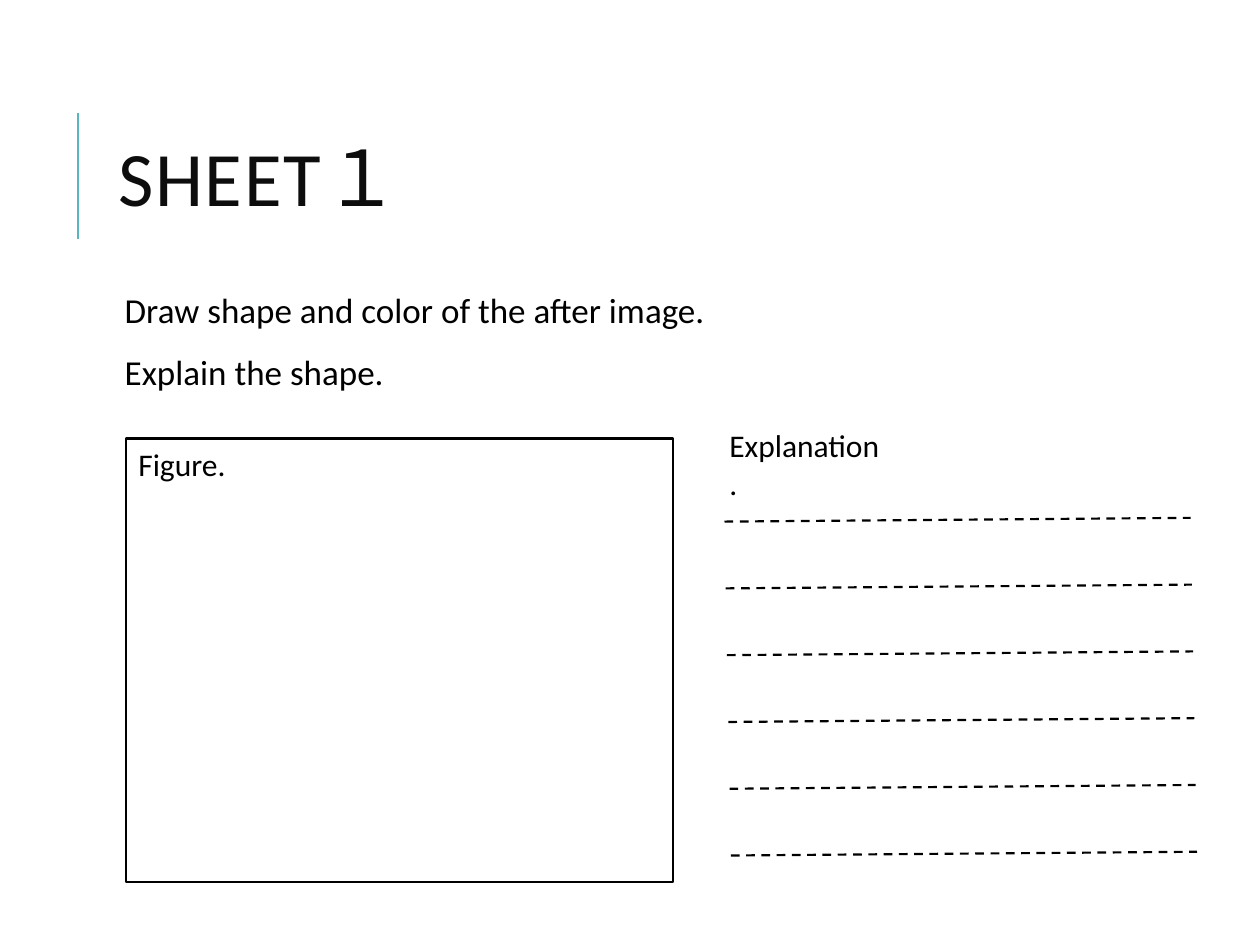
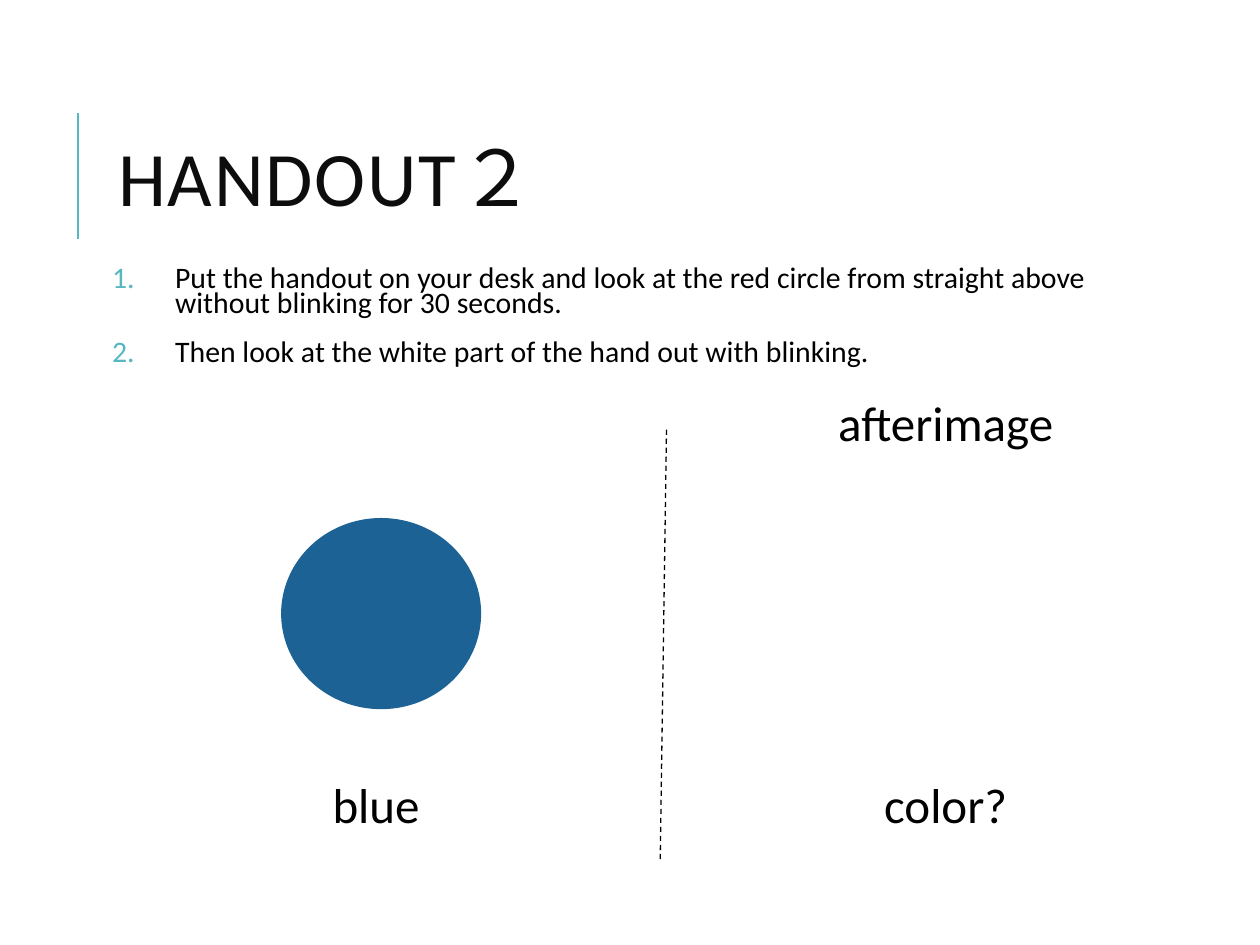
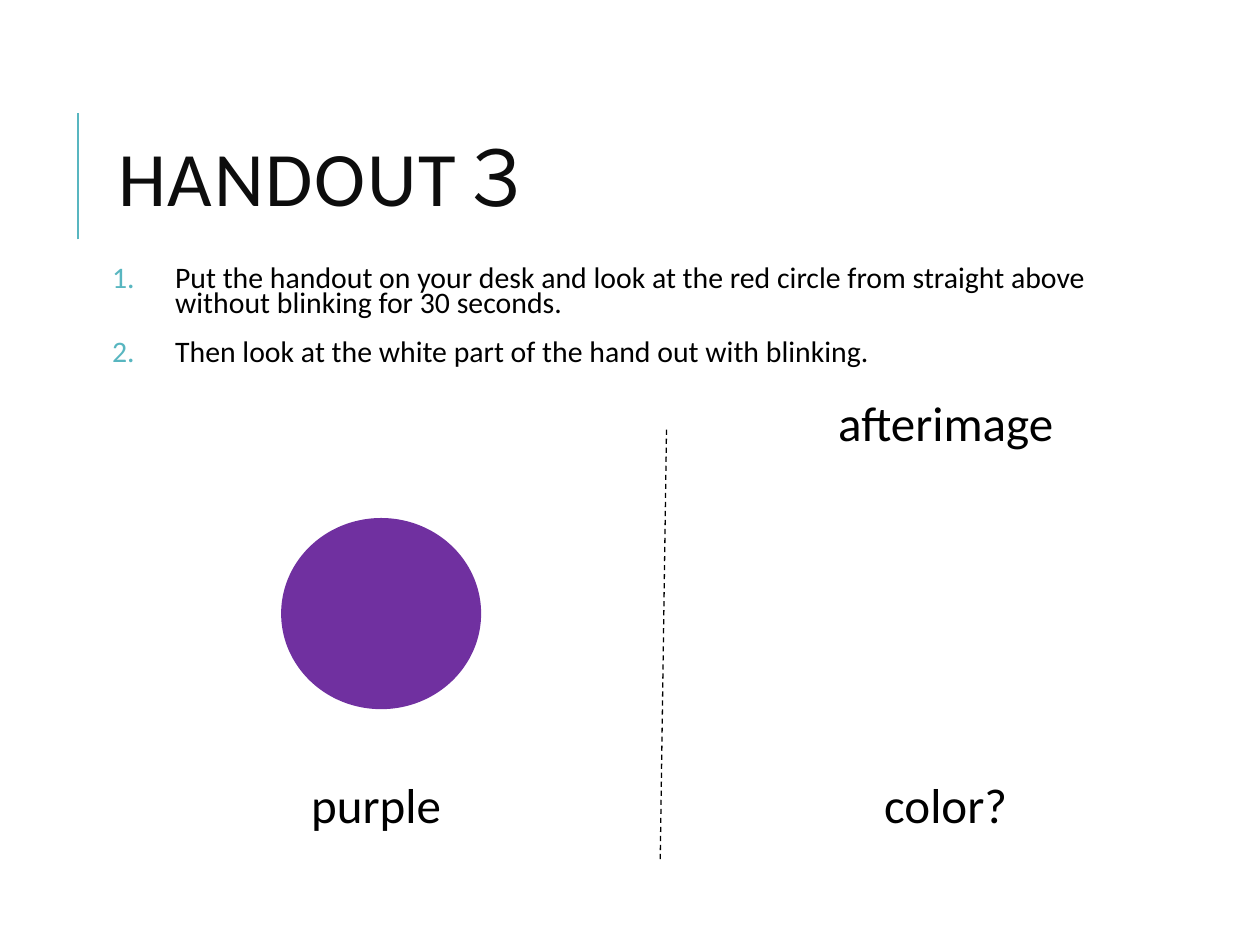
import pptx
import pptx.dml.color
import pptx.enum.dml
import pptx.enum.shapes
import pptx.enum.text
import pptx.oxml.xmlchemy
import pptx.util
from lxml import etree
from pptx.oxml.ns import qn
from pptx.util import Inches

FONT = "Calibri"
BLACK = "000000"
TITLE_INK = "0D0D0D"
ACCENT = "58B6C0"
TEXT_LEFT, TEXT_WIDTH = 0.84, 7.97
ALIGN = pptx.enum.text.PP_ALIGN
ANCHOR = pptx.enum.text.MSO_ANCHOR
STEPS = [
    "Put the handout on your desk and look at the red circle from straight above "
    "without blinking for 30 seconds.",
    "Then look at the white part of the hand out with blinking.",
]


def color(code):
    """Turn a hex string into a colour."""
    return pptx.dml.color.RGBColor.from_string(code)


def add_span(para, text, size, ink=BLACK):
    """Append one run to a paragraph."""
    span = para.add_run()
    span.text = text
    span.font.name = FONT
    span.font.size = pptx.util.Pt(size)
    span.font.color.rgb = color(ink)
    return span


def add_box(page, left, top, width, height):
    """Add a wrapping text box and return its text frame."""
    box = page.shapes.add_textbox(Inches(left), Inches(top), Inches(width), Inches(height))
    box.text_frame.word_wrap = True
    return box.text_frame


def add_label(page, text, left, top, width, size=28, align=ALIGN.CENTER):
    """Add a one-paragraph label."""
    para = add_box(page, left, top, width, 0.57).paragraphs[0]
    para.alignment = align
    add_span(para, text, size)


def add_line(page, start, end, ink=BLACK, weight=1.25, dashed=True):
    """Add a straight line between two points."""
    points = [Inches(value) for value in (*start, *end)]
    line = page.shapes.add_connector(pptx.enum.shapes.MSO_CONNECTOR.STRAIGHT, *points)
    line.line.color.rgb = color(ink)
    line.line.width = pptx.util.Pt(weight)
    if dashed:
        line.line.dash_style = pptx.enum.dml.MSO_LINE.DASH
    etree.SubElement(line._element.spPr, qn("a:effectLst"))


def add_outlined(page, kind, left, top, width, height, ink, fill=None):
    """Add a preset shape with an outline and an optional fill."""
    shape = page.shapes.add_shape(
        kind, Inches(left), Inches(top), Inches(width), Inches(height))
    shape.shadow.inherit = False
    shape.line.color.rgb = color(ink)
    shape.line.width = pptx.util.Pt(1.25)
    if fill:
        shape.fill.solid()
        shape.fill.fore_color.rgb = color(fill)
    else:
        shape.fill.background()
    return shape


def set_indent(para, left, numbered):
    """Indent a paragraph, with a hanging accent number if asked."""
    props = para._p.get_or_add_pPr()
    props.set("marL", str(Inches(left)))
    props.set("indent", str(-Inches(left) if numbered else 0))
    if numbered:
        tint = etree.SubElement(props, qn("a:buClr"))
        etree.SubElement(tint, qn("a:srgbClr"), val=ACCENT)
        etree.SubElement(props, qn("a:buFont"), typeface=FONT)
        etree.SubElement(props, qn("a:buAutoNum"), type="arabicPeriod")


def add_body(page, texts, top, size, spacing, indent, numbered=False):
    """Add the instruction paragraphs under the title."""
    frame = add_box(page, TEXT_LEFT, top, TEXT_WIDTH, 0.9)
    frame.margin_left = frame.margin_right = Inches(0.05)
    for index, text in enumerate(texts):
        para = frame.add_paragraph() if index else frame.paragraphs[0]
        para.line_spacing = spacing
        para.space_before = pptx.util.Pt(12)
        para.space_after = pptx.util.Pt(2)
        set_indent(para, indent, numbered)
        add_span(para, text, size)


def add_page(deck, title):
    """Add a blank page with the accent rule and title."""
    page = deck.slides.add_slide(deck.slide_layouts[6])
    add_line(page, (0.62, 1.9), (0.62, 0.9), ACCENT, 1.5, dashed=False)
    frame = add_box(page, TEXT_LEFT, 0.64, TEXT_WIDTH, 1.64)
    frame.vertical_anchor = ANCHOR.MIDDLE
    para = frame.paragraphs[0]
    para.line_spacing = 0.8
    span = add_span(para, title, 44, TITLE_INK)
    span._r.get_or_add_rPr().set("spc", "100")
    return page


def add_sheet(deck):
    """Add the answer sheet with a drawing frame and writing lines."""
    page = add_page(deck, "SHEET１")
    add_body(page, ["Draw shape and color of the after image.", "Explain the shape."],
             2.28, 20, 0.9, 0.1)
    figure = add_outlined(page, pptx.enum.shapes.MSO_SHAPE.RECTANGLE,
                          1, 3.48, 4.34, 3.52, BLACK)
    figure.text_frame.vertical_anchor = ANCHOR.TOP
    para = figure.text_frame.paragraphs[0]
    para.alignment = ALIGN.LEFT
    add_span(para, "Figure.", 18)
    for row in range(6):
        left, top = 5.75 + 0.01 * row, 4.14 + 0.53 * row
        add_line(page, (left, top), (left + 3.7, top - 0.03))
    add_label(page, "Explanation.", 5.69, 3.33, 1.44, 18, ALIGN.LEFT)


def add_handout(deck, title, name, fill):
    """Add a handout with a coloured circle and an afterimage area."""
    page = add_page(deck, title)
    add_body(page, STEPS, 2.08, 17, 0.7, 0.5, numbered=True)
    add_outlined(page, pptx.enum.shapes.MSO_SHAPE.OVAL, 2.24, 4.12, 1.57, 1.5, fill, fill)
    add_line(page, (5.29, 3.41), (5.24, 6.83), weight=0.75)
    add_label(page, name, 2.12, 6.1, 1.73)
    add_label(page, "color?", 6.03, 6.1, 2.95)
    add_label(page, "afterimage", 6.03, 3.07, 2.95)


def main():
    """Build and save the deck."""
    deck = pptx.Presentation()
    deck.slide_width, deck.slide_height = Inches(10), Inches(7.5)
    add_sheet(deck)
    add_handout(deck, "HANDOUT２", "blue", "1D6294")
    add_handout(deck, "HANDOUT３", "purple", "7030A0")
    deck.save("out.pptx")


if __name__ == "__main__":
    main()
